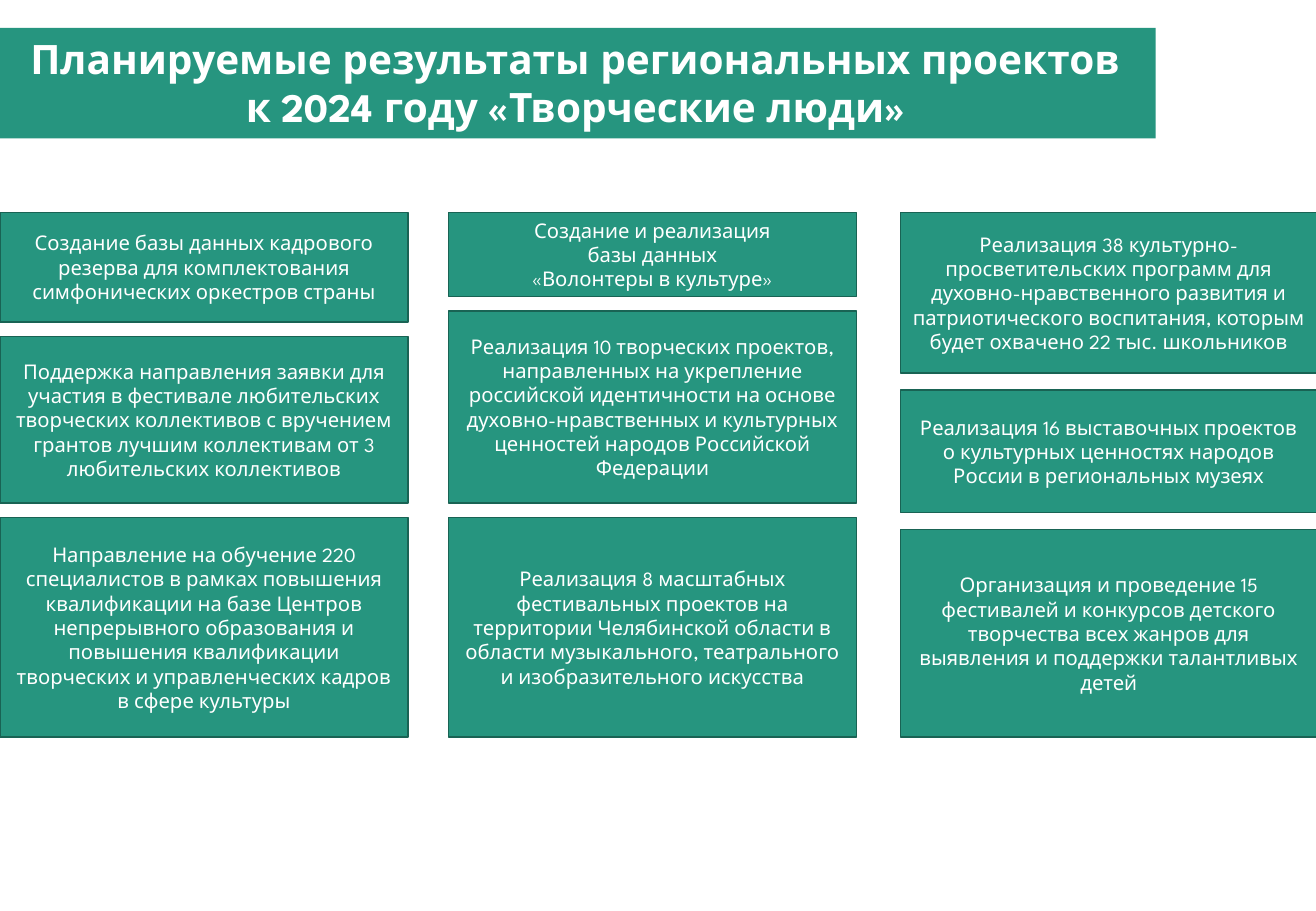
import pptx
import pptx.dml.color
import pptx.enum.shapes
import pptx.enum.text
import pptx.util
from pptx.util import Inches

GREEN = pptx.dml.color.RGBColor(0x26, 0x95, 0x7F)
DARK_GREEN = pptx.dml.color.RGBColor(0x19, 0x63, 0x54)
WHITE = pptx.dml.color.RGBColor(0xFF, 0xFF, 0xFF)
FONT = "League Spartan"

COLUMNS_TOP = 1.75
# Each column: left, width, gap between boxes, [(box height, text), ...]
COLUMNS = [
    (0, 3.36, 0.12, [
        (0.9, "Создание базы данных кадрового резерва для комплектования "
              "симфонических оркестров страны"),
        (1.37, "Поддержка направления заявки для участия в фестивале любительских "
               "творческих коллективов с вручением грантов лучшим коллективам "
               "от 3 любительских коллективов"),
        (1.81, "Направление на обучение 220 специалистов в рамках повышения "
               "квалификации на базе Центров непрерывного образования и повышения "
               "квалификации творческих и управленческих кадров в сфере культуры"),
    ]),
    (3.69, 3.36, 0.12, [
        (0.69, "Создание и реализация\nбазы данных\n«Волонтеры в культуре»"),
        (1.58, "Реализация 10 творческих проектов, направленных на укрепление "
               "российской идентичности на основе духовно-нравственных и культурных "
               "ценностей народов Российской Федерации"),
        (1.81, "Реализация 8 масштабных фестивальных проектов на территории "
               "Челябинской области в области музыкального, театрального "
               "и изобразительного искусства"),
    ]),
    (7.41, 3.43, 0.14, [
        (1.32, "Реализация 38 культурно-просветительских программ для "
               "духовно-нравственного развития и патриотического воспитания, "
               "которым будет охвачено 22 тыс. школьников"),
        (1.01, "Реализация 16 выставочных проектов о культурных ценностях народов "
               "России в региональных музеях"),
        (1.71, "Организация и проведение 15 фестивалей и конкурсов детского "
               "творчества всех жанров для выявления и поддержки талантливых детей"),
    ]),
]

presentation = pptx.Presentation()
presentation.slide_width = Inches(10.83)
presentation.slide_height = Inches(7.5)
slide = presentation.slides.add_slide(presentation.slide_layouts[6])


def add_text_box(text, *, left, top, width, height, size=12, bold=False, line=None,
                 anchor=pptx.enum.text.MSO_ANCHOR.MIDDLE):
    """Add a green rectangle with centred white text, one paragraph per line."""
    shape = slide.shapes.add_shape(
        pptx.enum.shapes.MSO_SHAPE.RECTANGLE,
        Inches(left), Inches(top), Inches(width), Inches(height))
    shape.shadow.inherit = False
    shape.fill.solid()
    shape.fill.fore_color.rgb = GREEN
    if line is None:
        shape.line.fill.background()
    else:
        shape.line.color.rgb = line
        shape.line.width = pptx.util.Pt(1)
    frame = shape.text_frame
    frame.word_wrap = True
    frame.vertical_anchor = anchor
    frame.text = text
    for paragraph in frame.paragraphs:
        paragraph.alignment = pptx.enum.text.PP_ALIGN.CENTER
        paragraph.font.name = FONT
        paragraph.font.size = pptx.util.Pt(size)
        paragraph.font.bold = bold
        paragraph.font.color.rgb = WHITE
    return shape


title = add_text_box(
    "Планируемые результаты региональных проектов\nк 2024 году «Творческие люди»",
    left=-0.04, top=0.23, width=9.55, height=0.91, size=24, bold=True,
    anchor=pptx.enum.text.MSO_ANCHOR.TOP)
title.text_frame.auto_size = pptx.enum.text.MSO_AUTO_SIZE.SHAPE_TO_FIT_TEXT

for left, width, gap, boxes in COLUMNS:
    top = COLUMNS_TOP
    for height, text in boxes:
        add_text_box(text, left=left, top=top, width=width, height=height,
                     line=DARK_GREEN)
        top += height + gap

presentation.save("out.pptx")
